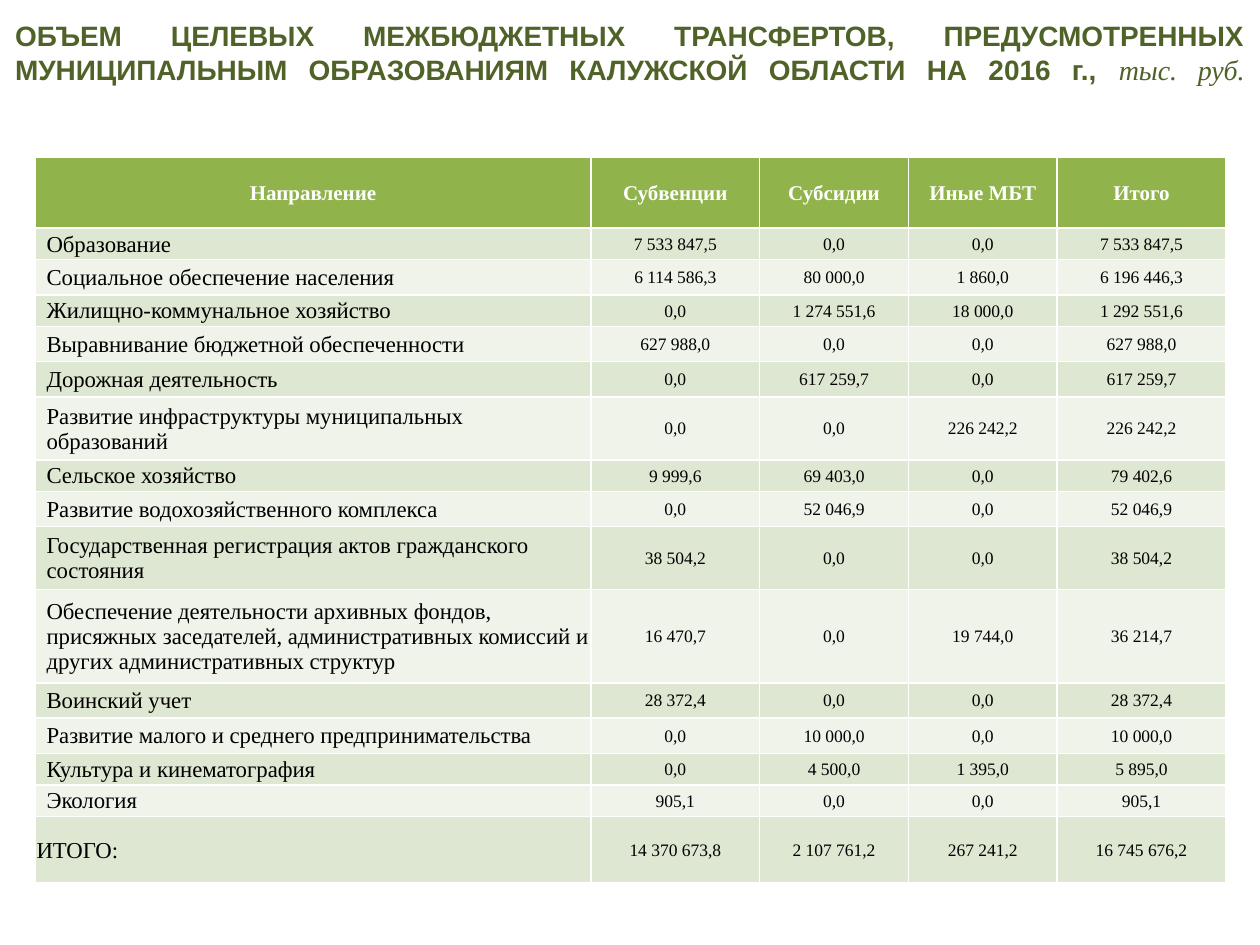
from lxml.etree import SubElement
from pptx import Presentation
from pptx.dml.color import RGBColor
from pptx.enum.text import MSO_ANCHOR, PP_ALIGN
from pptx.oxml.ns import qn
from pptx.util import Inches, Pt

SERIF = "Times New Roman"
TITLE_COLOR = "4F6228"
HEADER_FILL = "90B34B"
BAND_FILLS = ("EFF3EA", "DEE7D1")
COLUMN_WIDTHS = (4.41, 1.34, 1.18, 1.18, 1.34)

HEADER_HEIGHT, TOTAL_HEIGHT = 0.56, 0.53
HEADER = ("Направление", "Субвенции", "Субсидии", "Иные МБТ", "Итого")
TOTAL = ("ИТОГО:", "14 370 673,8", "2 107 761,2", "267 241,2", "16 745 676,2")
# Row height, followed by the texts of the row
BODY = (
    (0.25, "Образование", "7 533 847,5", "0,0", "0,0", "7 533 847,5"),
    (0.28, "Социальное обеспечение населения", "6 114 586,3", "80 000,0", "1 860,0", "6 196 446,3"),
    (0.25, "Жилищно-коммунальное хозяйство", "0,0", "1 274 551,6", "18 000,0", "1 292 551,6"),
    (0.28, "Выравнивание бюджетной обеспеченности", "627 988,0", "0,0", "0,0", "627 988,0"),
    (0.28, "Дорожная деятельность", "0,0", "617 259,7", "0,0", "617 259,7"),
    (0.5, "Развитие инфраструктуры муниципальных образований", "0,0", "0,0", "226 242,2", "226 242,2"),
    (0.25, "Сельское хозяйство", "9 999,6", "69 403,0", "0,0", "79 402,6"),
    (0.28, "Развитие водохозяйственного комплекса", "0,0", "52 046,9", "0,0", "52 046,9"),
    (0.5, "Государственная регистрация актов гражданского состояния",
     "38 504,2", "0,0", "0,0", "38 504,2"),
    (0.74, "Обеспечение деятельности архивных фондов, присяжных заседателей, "
     "административных комиссий и других административных структур",
     "16 470,7", "0,0", "19 744,0", "36 214,7"),
    (0.28, "Воинский учет", "28 372,4", "0,0", "0,0", "28 372,4"),
    (0.28, "Развитие малого и среднего предпринимательства", "0,0", "10 000,0", "0,0", "10 000,0"),
    (0.25, "Культура и кинематография", "0,0", "4 500,0", "1 395,0", "5 895,0"),
    (0.25, "Экология", "905,1", "0,0", "0,0", "905,1"),
)


def color(value):
    return RGBColor.from_string(value)


def add_text(paragraph, text, size, font=SERIF, text_color="000000", bold=False, italic=False):
    run = paragraph.add_run()
    run.text = text
    run.font.name = font
    run.font.size = Pt(size)
    run.font.bold = bold
    run.font.italic = italic
    run.font.color.rgb = color(text_color)


def add_title(slide):
    title = slide.shapes.title
    title.left, title.top = Inches(0.12), Inches(0.13)
    title.width, title.height = Inches(9.76), Inches(0.91)
    frame = title.text_frame
    frame.margin_left = frame.margin_right = frame.margin_bottom = 0
    frame.margin_top = Inches(0.02)
    frame.vertical_anchor = MSO_ANCHOR.TOP
    frame.word_wrap = True
    paragraph = frame.paragraphs[0]
    paragraph.alignment = PP_ALIGN.JUSTIFY
    add_text(paragraph, "ОБЪЕМ ЦЕЛЕВЫХ МЕЖБЮДЖЕТНЫХ ТРАНСФЕРТОВ, ПРЕДУСМОТРЕННЫХ "
             "МУНИЦИПАЛЬНЫМ ОБРАЗОВАНИЯМ КАЛУЖСКОЙ ОБЛАСТИ НА 2016 г., ",
             16, font="Arial", text_color=TITLE_COLOR, bold=True)
    add_text(paragraph, "тыс. руб.", 16, text_color=TITLE_COLOR, italic=True)
    # The closing break makes the last line justified too
    paragraph.add_line_break()


def add_borders(cell):
    properties = cell._tc.get_or_add_tcPr()
    for side in ("a:lnL", "a:lnR", "a:lnT", "a:lnB"):
        line = SubElement(properties, qn(side), w=str(Pt(1)))
        solid = SubElement(line, qn("a:solidFill"))
        SubElement(solid, qn("a:srgbClr"), val="FFFFFF")


def fill_cell(cell, text, fill, alignment=PP_ALIGN.CENTER, indent=0, **text_format):
    add_borders(cell)
    cell.fill.solid()
    cell.fill.fore_color.rgb = color(fill)
    cell.margin_left = cell.margin_right = cell.margin_top = Inches(0.01)
    cell.margin_bottom = 0
    cell.vertical_anchor = MSO_ANCHOR.MIDDLE
    paragraph = cell.text_frame.paragraphs[0]
    paragraph.alignment = alignment
    if indent:
        properties = paragraph._p.get_or_add_pPr()
        properties.set("marL", str(Inches(indent)))
        properties.set("indent", "0")
    add_text(paragraph, text, **text_format)


def add_transfer_table(slide):
    rows = [(HEADER_HEIGHT, *HEADER), *BODY, (TOTAL_HEIGHT, *TOTAL)]
    heights = [row[0] for row in rows]
    table = slide.shapes.add_table(
        len(rows), len(COLUMN_WIDTHS), Inches(0.28), Inches(1.25),
        Inches(sum(COLUMN_WIDTHS)), Inches(sum(heights))).table
    table.horz_banding = False
    for column, width in zip(table.columns, COLUMN_WIDTHS):
        column.width = Inches(width)

    for row_index, (height, *texts) in enumerate(rows):
        table.rows[row_index].height = Inches(height)
        band = BAND_FILLS[row_index % 2]
        for column_index, text in enumerate(texts):
            cell = table.cell(row_index, column_index)
            if row_index == 0:
                fill_cell(cell, text, HEADER_FILL, size=12, text_color="FFFFFF", bold=True)
            elif column_index == 0:
                indent = 0.08 if row_index <= len(BODY) else 0
                fill_cell(cell, text, band, PP_ALIGN.LEFT, indent, size=13)
            else:
                fill_cell(cell, text, band, size=10)


def main():
    presentation = Presentation()
    presentation.slide_width, presentation.slide_height = Inches(10), Inches(7.5)
    slide = presentation.slides.add_slide(presentation.slide_layouts[5])
    add_title(slide)
    add_transfer_table(slide)
    presentation.save("out.pptx")


if __name__ == "__main__":
    main()
